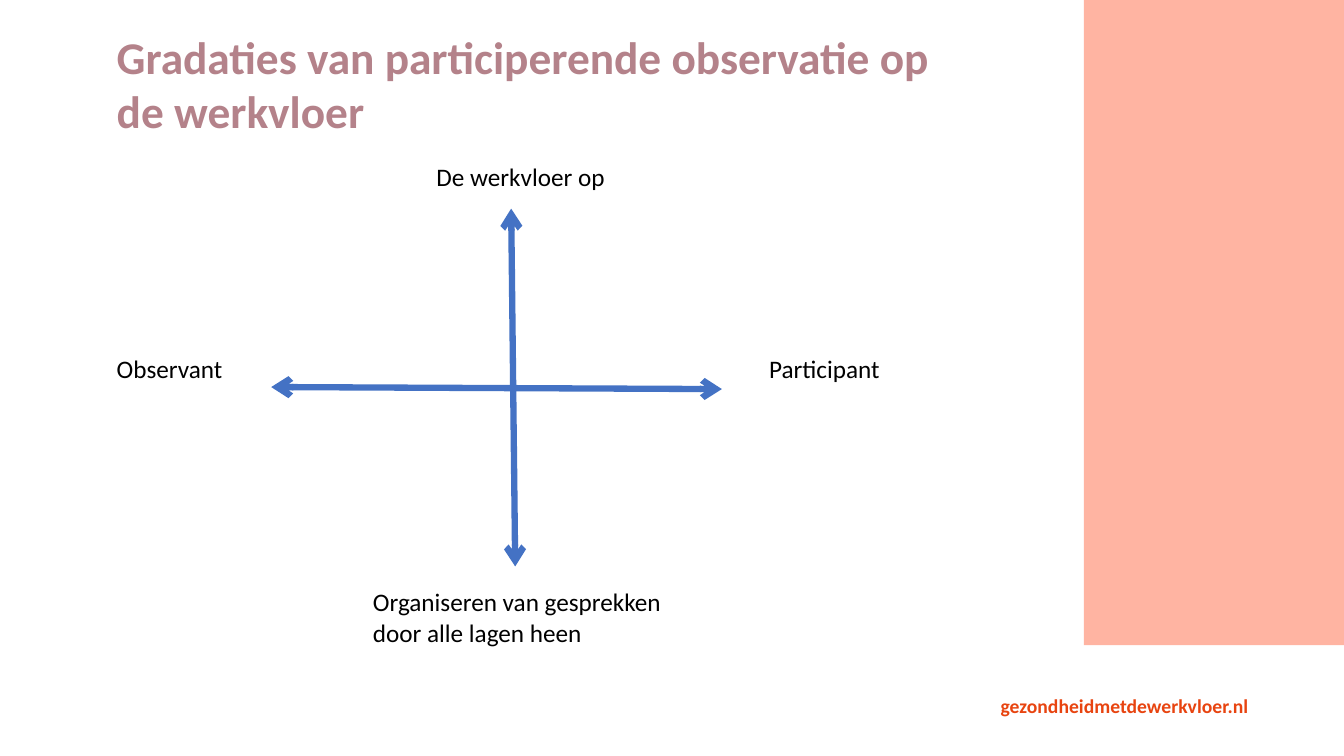
from lxml.etree import SubElement
from pptx import Presentation
from pptx.dml.color import RGBColor
from pptx.enum.shapes import MSO_CONNECTOR, MSO_SHAPE
from pptx.enum.text import MSO_ANCHOR, MSO_AUTO_SIZE, PP_ALIGN
from pptx.oxml.ns import qn
from pptx.util import Pt

PX = 9144  # EMU per px, at 100 px to the inch

PINK = RGBColor(0xFF, 0xB4, 0xA2)
MAUVE = RGBColor(0xB4, 0x82, 0x8A)
ORANGE = RGBColor(0xE8, 0x44, 0x10)
BLUE = RGBColor(0x44, 0x72, 0xC4)
BLACK = RGBColor(0x00, 0x00, 0x00)

TITLE_FONT = {"name": "Calibri", "size": Pt(32.4), "bold": True}
FOOTER_FONT = {"name": "Calibri", "size": Pt(14), "bold": True}
LABEL_FONT = {"name": "Calibri", "size": Pt(18), "bold": False}

LABEL_FRAME = {"word_wrap": False, "auto_size": MSO_AUTO_SIZE.SHAPE_TO_FIT_TEXT}

# Each label: left, top, width, height, lines
LABELS = [
    (106, 346, 126, 40, ["Observant"]),
    (753, 346, 131, 40, ["Participant"]),
    (423, 155, 189, 40, ["De werkvloer op"]),
    (360, 577, 315, 71, ["Organiseren van gesprekken", "door alle lagen heen"]),
]

# Each axis: start x, start y, end x, end y
AXES = [(269, 384, 716, 386), (507, 207, 511, 562)]


def to_emu(*lengths):
    return [length * PX for length in lengths]


def set_attributes(target, values):
    for name, value in values.items():
        setattr(target, name, value)


def add_text(slide, box, lines, font, color, frame_format, paragraph_format=None):
    text_frame = slide.shapes.add_textbox(*to_emu(*box)).text_frame
    set_attributes(text_frame, frame_format)
    text_frame.text = "\n".join(lines)
    for paragraph in text_frame.paragraphs:
        set_attributes(paragraph, paragraph_format or {})
        set_attributes(paragraph.font, font)
        paragraph.font.color.rgb = color


def add_panel(slide, box, color):
    shape = slide.shapes.add_shape(MSO_SHAPE.RECTANGLE, *to_emu(*box))
    shape.shadow.inherit = False
    shape.fill.solid()
    shape.fill.fore_color.rgb = color
    shape.line.fill.background()


def add_double_arrow(slide, ends):
    connector = slide.shapes.add_connector(MSO_CONNECTOR.STRAIGHT, *to_emu(*ends))
    connector.line.color.rgb = BLUE
    connector.line.width = Pt(4.5)
    line = connector.line._get_or_add_ln()
    for end in ("a:headEnd", "a:tailEnd"):
        SubElement(line, qn(end), type="arrow")
    SubElement(connector._element.spPr, qn("a:effectLst"))


def main():
    presentation = Presentation()
    presentation.slide_width, presentation.slide_height = to_emu(1333, 750)
    slide = presentation.slides.add_slide(presentation.slide_layouts[6])

    # Footer and side panel
    add_text(slide, (834, 674, 414, 43), ["gezondheidmetdewerkvloer.nl"],
             FOOTER_FONT, ORANGE,
             {"word_wrap": True, "vertical_anchor": MSO_ANCHOR.BOTTOM},
             {"alignment": PP_ALIGN.RIGHT, "line_spacing": 1.3})
    add_panel(slide, (1075, 0, 258, 640), PINK)

    # Title
    add_text(slide, (106, 24, 847, 117),
             ["Gradaties van participerende observatie op de werkvloer"],
             TITLE_FONT, MAUVE,
             {"word_wrap": True, "vertical_anchor": MSO_ANCHOR.MIDDLE})

    # Crossed axes with a label at each end
    for ends in AXES:
        add_double_arrow(slide, ends)
    for *box, lines in LABELS:
        add_text(slide, box, lines, LABEL_FONT, BLACK, LABEL_FRAME)

    presentation.save("out.pptx")


if __name__ == "__main__":
    main()
